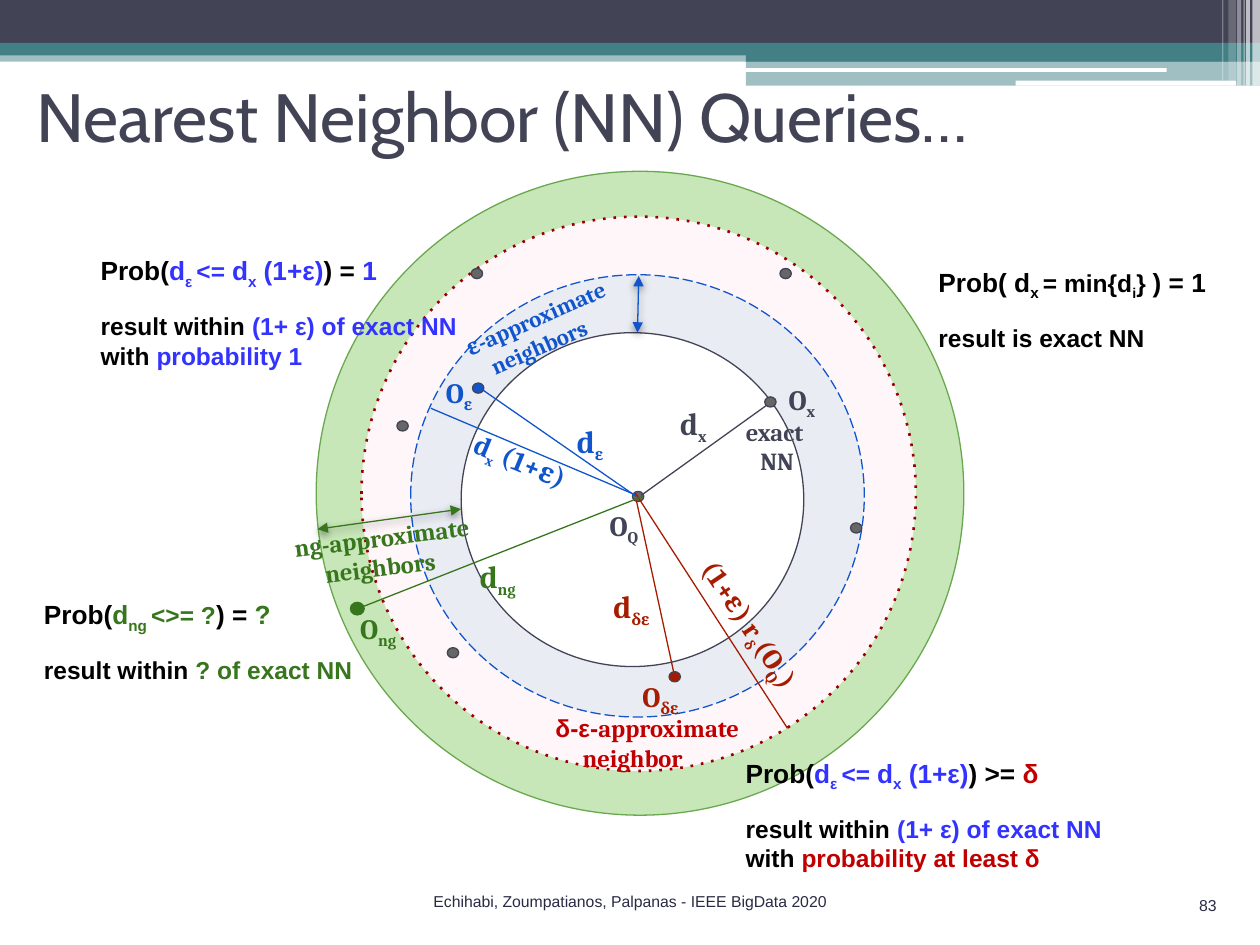
from lxml import etree
from pptx import Presentation
from pptx.dml.color import RGBColor
from pptx.enum import dml, shapes, text
from pptx.oxml import ns
from pptx.util import Pt

NAVY = RGBColor(0x42, 0x44, 0x56)
TEAL = RGBColor(0x43, 0x80, 0x86)
WHITE = RGBColor(0xFF, 0xFF, 0xFF)
BLACK = RGBColor(0, 0, 0)
GRAY = RGBColor(0x66, 0x66, 0x66)
INK = RGBColor(0x2A, 0x2A, 0x45)
BLUE = RGBColor(0x11, 0x55, 0xCC)
VIOLET = RGBColor(0x33, 0x33, 0xFF)
GREEN = RGBColor(0x38, 0x76, 0x1D)
RUST = RGBColor(0xA6, 0x1C, 0x00)
RED = RGBColor(0xC0, 0x00, 0x00)
MAROON = RGBColor(0x98, 0x00, 0x00)
LEAF = RGBColor(0x6A, 0xA8, 0x4F)
PALE_GREEN = RGBColor(0xC8, 0xE7, 0xB8)
PALE_PINK = RGBColor(0xFF, 0xF6, 0xF9)
PALE_BLUE = RGBColor(0xE9, 0xEC, 0xF3)

MSO = shapes.MSO_SHAPE
DASH = dml.MSO_LINE
CENTER = text.PP_ALIGN.CENTER

prs = Presentation()
prs.slide_width, prs.slide_height = Pt(720), Pt(540)
s = prs.slides.add_slide(prs.slide_layouts[6])


def add_shape(kind, box, fill, alpha=100, line=None, width=0.75, dash=None):
    sp = s.shapes.add_shape(kind, *[Pt(v) for v in box])
    sp.shadow.inherit = False
    sp.fill.solid()
    sp.fill.fore_color.rgb = fill
    if alpha < 100:
        clr = sp._element.spPr.find(".//" + ns.qn("a:srgbClr"))
        etree.SubElement(clr, ns.qn("a:alpha"), val=str(alpha * 1000))
    if line is None:
        sp.line.fill.background()
    else:
        sp.line.color.rgb = line
        sp.line.width = Pt(width)
        if dash:
            sp.line.dash_style = dash
    return sp


def add_text(box, paras, font="Cambria", bold=True, rot=0, inset=7.2, gap=0, indents=(0, 0), align=None):
    sp = s.shapes.add_textbox(*[Pt(v) for v in box])
    sp.rotation = rot
    tf = sp.text_frame
    tf.word_wrap = True
    tf.margin_top = tf.margin_bottom = Pt(inset)
    tf.margin_left = tf.margin_right = Pt(7.2)
    for i, runs in enumerate(paras):
        p = tf.paragraphs[0] if i == 0 else tf.add_paragraph()
        p.alignment = align
        if i and gap:
            p.space_before = Pt(gap)
        if indents[i]:
            p._p.get_or_add_pPr().set("marL", str(Pt(indents[i])))
        for words, size, color, *sub in runs:
            r = p.add_run()
            r.text = words
            r.font.name = font
            r.font.size = Pt(size)
            r.font.bold = bold
            r.font.color.rgb = color
            if sub:
                r._r.get_or_add_rPr().set("baseline", "-25000")
    return tf


bands = [
    ((0, 28.8, 720, 6.5), TEAL, 50),
    ((0, 0, 720, 24.5), NAVY, 100),
    ((0, 24.5, 720, 7.2), TEAL, 100),
    ((426.2, 28.1, 293.8, 7.2), TEAL, 100),
    ((426.2, 34.6, 293.8, 14.4), TEAL, 50),
]
for box, fill, alpha in bands:
    add_shape(MSO.RECTANGLE, box, fill, alpha)
for box in [(425.5, 38.9, 241.2, 2.2), (580.3, 46.1, 126, 2.9)]:
    add_shape(MSO.ROUNDED_RECTANGLE, box, WHITE)
for x, w, h, alpha in [(715.7, 4.3, 49, 65), (712.1, 2.2, 49, 65), (710.6, 0.7, 49, 60),
                       (707, 2.2, 49, 40), (702, 4.3, 46.1, 20), (698.4, 0.7, 46.1, 30)]:
    add_shape(MSO.RECTANGLE, (x, 0, w, h), WHITE, alpha)

rings = [
    ((180.7, 97.9, 370.1, 367.9), PALE_GREEN, LEAF, 0.75, None),
    ((206.6, 123.8, 316.8, 316.8), PALE_PINK, MAROON, 1.5, DASH.ROUND_DOT),
    ((234.7, 157, 259.2, 252.7), PALE_BLUE, BLUE, 0.75, DASH.LONG_DASH),
    ((263.5, 190.1, 195.8, 190.8), WHITE, NAVY, 0.75, None),
]
for box, fill, line, width, dash in rings:
    sp = add_shape(MSO.OVAL, box, fill, line=line, width=width, dash=dash)
    if dash == DASH.ROUND_DOT:
        sp._element.spPr.find(".//" + ns.qn("a:prstDash")).set("val", "dot")

add_shape(MSO.OVAL, (361.4, 280.8, 6.5, 5.8), GRAY, line=NAVY)

lines = [
    (246.2, 233.3, 363.6, 283, BLUE, False),
    (366.5, 283, 437.8, 231.8, NAVY, False),
    (272.2, 220.3, 363.6, 283.7, BLUE, False),
    (362.9, 281.5, 450, 416.2, RUST, False),
    (367.2, 283.7, 204.5, 347.8, GREEN, False),
    (363.6, 285.8, 385.2, 385.2, RUST, False),
    (365, 157.7, 364.3, 190.1, BLUE, True),
    (181.4, 302.4, 263.5, 290.9, GREEN, True),
]
for x1, y1, x2, y2, color, arrow in lines:
    cn = s.shapes.add_connector(shapes.MSO_CONNECTOR.STRAIGHT, Pt(x1), Pt(y1), Pt(x2), Pt(y2))
    cn.line.color.rgb = color
    cn.line.width = Pt(0.75)
    effects = etree.SubElement(cn._element.spPr, ns.qn("a:effectLst"))
    if arrow:
        ln = cn.line._get_or_add_ln()
        for end in ("a:headEnd", "a:tailEnd"):
            etree.SubElement(ln, ns.qn(end), type="triangle")
        shadow = etree.SubElement(effects, ns.qn("a:outerShdw"), blurRad=str(Pt(4.5)),
                                  dist=str(Pt(1.5)), dir="5400000", algn="bl", rotWithShape="0")
        clr = etree.SubElement(shadow, ns.qn("a:srgbClr"), val="000000")
        etree.SubElement(clr, ns.qn("a:alpha"), val="50000")

dots = [(270, 218.9, BLUE), (437, 226.8, GRAY), (382.3, 383.8, RUST),
        (269.3, 153.4, GRAY), (226.8, 240.5, GRAY), (255.6, 370.1, GRAY),
        (445.7, 153.4, GRAY), (486, 298.8, GRAY)]
for x, y, fill in dots:
    add_shape(MSO.OVAL, (x, y, 6.5, 5.8), fill, line=NAVY)
add_shape(MSO.OVAL, (200.2, 344.2, 7.9, 7.2), GREEN, line=GREEN)

symbols = [
    ((381.6, 223.9, 40.3, 28.8), "d", "x", 18, NAVY),
    ((322.6, 234, 32.4, 34.6), "d", "ε", 18, BLUE),
    ((343.4, 328.3, 39.6, 20.2), "d", "δε", 18, RUST),
    ((267.1, 311, 46.1, 37.4), "d", "ng", 18, GREEN),
    ((443.5, 211.7, 37.4, 38.2), "O", "x", 16, NAVY),
    ((360, 380.9, 46.1, 25.9), "O", "δε", 16, RUST),
    ((341.3, 283.7, 37.4, 38.2), "O", "Q", 16, NAVY),
    ((198.7, 342, 71.3, 38.2), "O", "ng", 16, GREEN),
    ((247.7, 207.4, 91.4, 54.7), "O", "ε", 16, BLUE),
]
for box, letter, index, size, color in symbols:
    add_text(box, [[(letter, size, color), (index, 16, color, True)]])

add_text((370.1, 344.2, 119.5, 41), [[("(1+ε) r", 16, RUST), ("δ", 14, RUST, True), ("(O", 16, RUST),
         ("Q", 16, RUST, True), (")", 16, RUST)]], rot=56.1, indents=(3.5,))
add_text((258.5, 248.4, 87.1, 36), [[("d", 16, BLUE), ("x", 14, BLUE, True), (" (1+ε)", 16, BLUE)]],
         rot=22.6, indents=(3.5,))
add_text((160.6, 290.2, 131.8, 28.8), [[("ng-approximate", 14, GREEN)], [("neighbors", 14, GREEN)]],
         rot=352.9, indents=(0, 15.5))
add_text((255.6, 164.2, 111.6, 29.5), [[("ε-approximate", 13, BLUE)], [("neighbors", 13, BLUE)]],
         rot=336.3, indents=(0, 8.5))
tf = add_text((310.3, 400.3, 135.4, 28.8), [[("δ-ε-", 14, RED), ("approximate", 14, RED)],
              [("neighbor", 14, RED)]], indents=(0, 15.5))
tf.paragraphs[0].runs[0].font.name = "Arial"
add_text((390.2, 231.1, 108, 33.8), [[("exact ", 14, NAVY)], [("NN", 14, NAVY)]], align=CENTER)

bound = [("Prob(", 15, BLACK), ("d", 15, VIOLET), ("ε ", 15, VIOLET, True), ("<= ", 14, VIOLET),
         ("d", 15, VIOLET), ("x", 15, VIOLET, True), (" (1+ε)", 15, VIOLET)]
within = [("result within ", 14, BLACK), ("(1+ ε) of exact NN ", 14, VIOLET), ("with ", 14, BLACK)]
notes = [
    ((419, 425.5, 233.3, 79.2), bound + [(") >= ", 15, BLACK), ("δ", 15, RED)],
     within + [("probability at least δ", 14, RED)]),
    ((50.4, 138.2, 233.3, 79.2), bound + [(") = ", 15, BLACK), ("1", 15, VIOLET)],
     within + [("probability 1", 14, VIOLET)]),
    ((18, 334.8, 200.9, 64.1),
     [("Prob(", 15, BLACK), ("d", 15, GREEN), ("ng ", 15, GREEN, True), ("<>= ?", 14, GREEN),
      (") = ", 15, BLACK), ("?", 15, GREEN)],
     [("result within ", 14, BLACK), ("? of exact NN", 14, GREEN)]),
    ((529.2, 144.7, 172.8, 64.1),
     [("Prob( d", 15, BLACK), ("x ", 15, BLACK, True), ("= min{d", 14, BLACK), ("i", 14, BLACK, True),
      ("} ", 14, BLACK), (") = 1", 15, BLACK)],
     [("result is exact NN", 14, BLACK)]),
]
for box, formula, meaning in notes:
    add_text(box, [formula, meaning], font="Arial", gap=12)

add_text((13.7, 38.9, 648, 84.2), [[("Nearest Neighbor (NN) Queries…", 39, NAVY)]],
         font="Cabin", bold=False, inset=3.6)
tf = add_text((238.3, 500.4, 243.4, 28.8), [[("Echihabi, Zoumpatianos, Palpanas - IEEE BigData 2020", 9, INK)]],
              font="Arial", bold=False, inset=3.6, align=CENTER)
tf.vertical_anchor = text.MSO_ANCHOR.MIDDLE
add_text((678.2, 508.3, 30.2, 18), [[("83", 9, INK)]], font="Arial", bold=False, inset=3.6)

prs.save("out.pptx")
